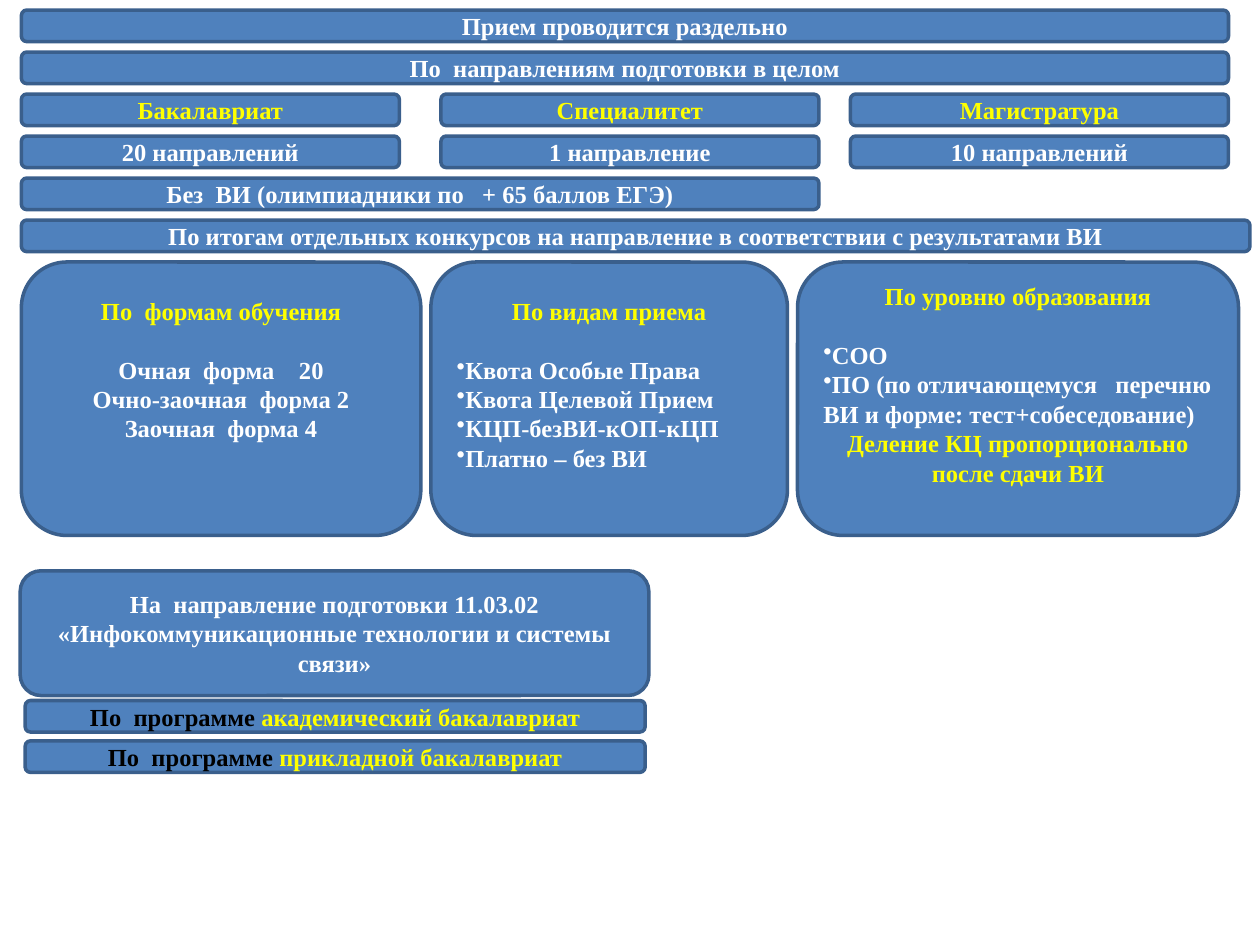
from pptx import Presentation
from pptx.dml.color import RGBColor
from pptx.enum.shapes import MSO_SHAPE
from pptx.enum.text import MSO_ANCHOR, PP_ALIGN
from pptx.oxml.ns import qn
from pptx.util import Inches, Pt
from lxml import etree

BLUE = RGBColor(0x4F, 0x81, 0xBD)
BORDER = RGBColor(0x3A, 0x5F, 0x8C)
WHITE = RGBColor(0xFF, 0xFF, 0xFF)
YELLOW = RGBColor(0xFF, 0xFF, 0x00)
BLACK = RGBColor(0x00, 0x00, 0x00)

FONT = "Times New Roman"
FONT_SIZE = 14
LINE_HEIGHT = 16.8  # points taken by one line of text

LEFT = 0.17
TOP = 0.08
ROW_STEP = 1 / 3
BAR_HEIGHT = 0.25


def add_run(paragraph, text, color):
    run = paragraph.add_run()
    run.text = text
    run.font.name = FONT
    run.font.size = Pt(FONT_SIZE)
    run.font.bold = True
    run.font.color.rgb = color


def add_bullet(paragraph):
    bullet = etree.SubElement(paragraph._p.get_or_add_pPr(), qn("a:buChar"))
    bullet.set("char", "•")


def add_box(slide, left, top, width, height):
    """Add a rounded box and return its text frame."""
    shape = slide.shapes.add_shape(
        MSO_SHAPE.ROUNDED_RECTANGLE,
        Inches(left), Inches(top), Inches(width), Inches(height))
    shape.shadow.inherit = False
    shape.fill.solid()
    shape.fill.fore_color.rgb = BLUE
    shape.line.color.rgb = BORDER
    shape.line.width = Pt(2)
    text_frame = shape.text_frame
    text_frame.word_wrap = True
    text_frame.vertical_anchor = MSO_ANCHOR.MIDDLE
    return text_frame


def add_label(slide, left, top, width, height, *parts):
    """Add a box with one centred paragraph of (text, colour) parts."""
    paragraph = add_box(slide, left, top, width, height).paragraphs[0]
    paragraph.alignment = PP_ALIGN.CENTER
    for text, color in parts:
        add_run(paragraph, text, color)


def add_card(slide, left, top, width, height, heading, lines, free_lines):
    """Add a card: a heading, then (text, colour, bulleted) lines."""
    text_frame = add_box(slide, left, top, width, height)
    # Space kept free below the text
    text_frame.margin_bottom = Inches(0.05) + Pt(free_lines * LINE_HEIGHT)
    paragraph = text_frame.paragraphs[0]
    paragraph.alignment = PP_ALIGN.CENTER
    paragraph.space_after = Pt(LINE_HEIGHT)
    add_run(paragraph, heading, YELLOW)
    for text, color, bulleted in lines:
        paragraph = text_frame.add_paragraph()
        paragraph.alignment = PP_ALIGN.LEFT if bulleted else PP_ALIGN.CENTER
        if bulleted:
            add_bullet(paragraph)
        add_run(paragraph, text, color)


def add_admission_rows(slide, left, top):
    """Add the stacked bars in the upper part of the slide."""
    full_bars = [
        (0, 9.58, "Прием проводится раздельно"),
        (1, 9.58, "По  направлениям подготовки в целом"),
        (4, 6.33, "Без  ВИ (олимпиадники по   + 65 баллов ЕГЭ)"),
        (5, 9.75, "По итогам отдельных конкурсов на направление "
                  "в соответствии с результатами ВИ"),
    ]
    for row, width, text in full_bars:
        add_label(slide, left, top + row * ROW_STEP, width, BAR_HEIGHT,
                  (text, WHITE))

    # Levels of study and their number of programmes
    levels = [
        (0, "Бакалавриат", "20 направлений"),
        (3.33, "Специалитет", "1 направление"),
        (6.58, "Магистратура", "10 направлений"),
    ]
    for offset, level, count in levels:
        for row, text, color in ((2, level, YELLOW), (3, count, WHITE)):
            add_label(slide, left + offset, top + row * ROW_STEP, 3,
                      BAR_HEIGHT, (text, color))


def add_contest_cards(slide, left, top, height):
    """Add the three cards that split the contests."""
    forms = ["Очная  форма    20", "Очно-заочная  форма 2", "Заочная  форма 4"]
    kinds = ["Квота Особые Права", "Квота Целевой Прием",
             "КЦП-безВИ-кОП-кЦП", "Платно – без ВИ"]
    education = ["СОО", "ПО (по отличающемуся   перечню ВИ и форме: "
                        "тест+собеседование)"]
    division = ("Деление КЦ пропорционально после сдачи ВИ", YELLOW, False)
    cards = [
        (3.17, "По  формам обучения",
         [(text, WHITE, False) for text in forms], 2),
        (2.83, "По видам приема",
         [(text, WHITE, True) for text in kinds], 1),
        (3.5, "По уровню образования",
         [(text, WHITE, True) for text in education] + [division], 1),
    ]
    for width, heading, lines, free_lines in cards:
        add_card(slide, left, top, width, height, heading, lines, free_lines)
        left += width + 0.08


def add_programme_block(slide, left, top, width):
    """Add the example field of study and its two programmes."""
    add_label(slide, left, top, width, 0.99,
              ("На  направление подготовки 11.03.02 «Инфокоммуникационные "
               "технологии и системы связи»", WHITE))
    programmes = ["академический бакалавриат", "прикладной бакалавриат"]
    for row, programme in enumerate(programmes):
        add_label(slide, left + 0.04, top + 1.03 + row * 0.32, width - 0.07,
                  BAR_HEIGHT, ("По  программе ", BLACK), (programme, YELLOW))


def main():
    presentation = Presentation()
    presentation.slide_width = Inches(10)
    presentation.slide_height = Inches(7.5)
    slide = presentation.slides.add_slide(presentation.slide_layouts[6])
    add_admission_rows(slide, LEFT, TOP)
    add_contest_cards(slide, LEFT, TOP + 6 * ROW_STEP, 2.17)
    add_programme_block(slide, 0.16, 4.53, 4.99)
    presentation.save("out.pptx")


if __name__ == "__main__":
    main()
